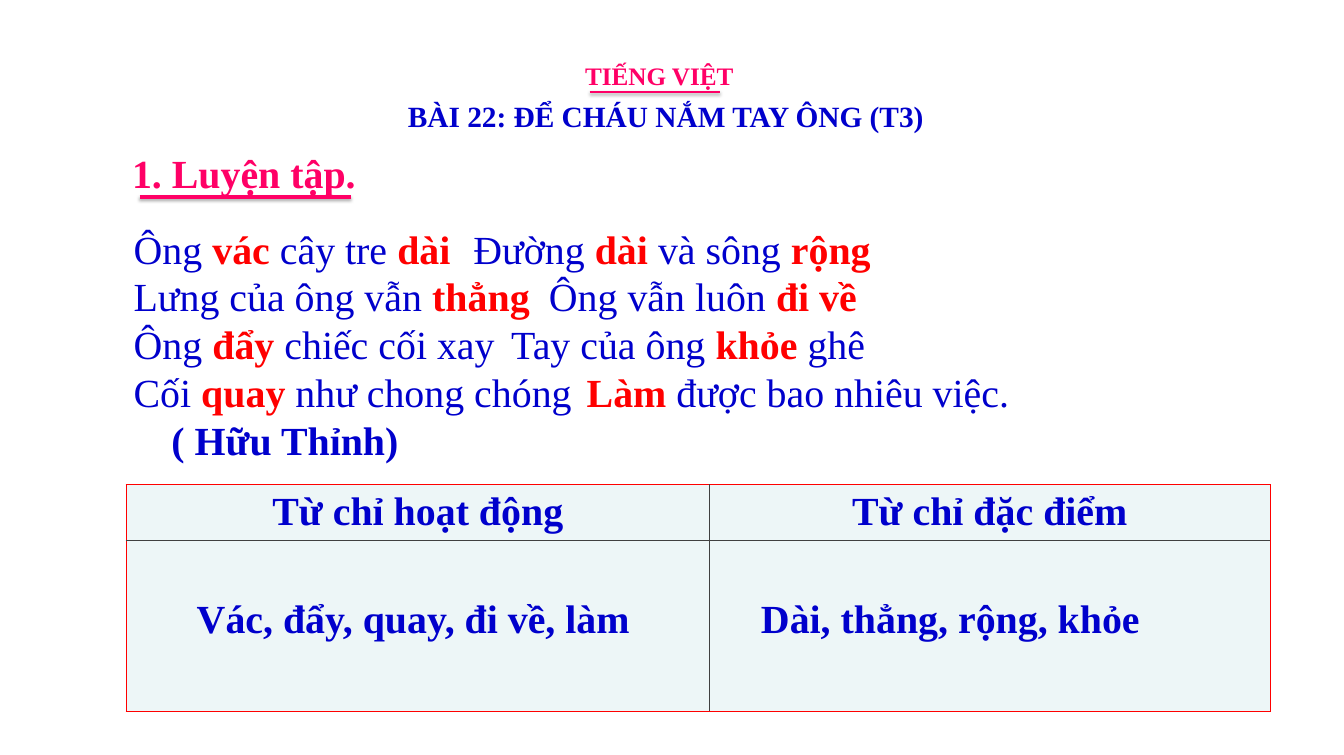
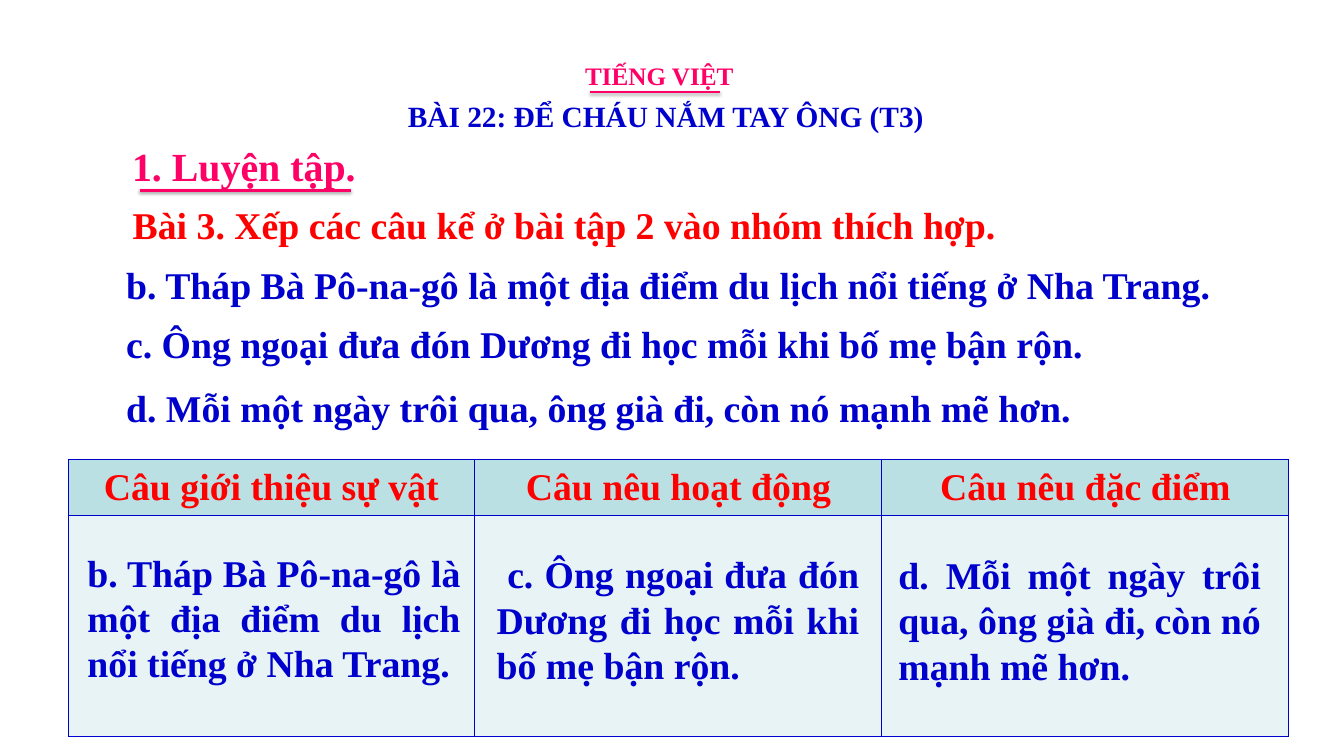
import pptx
import pptx.dml.color
import pptx.enum.shapes
import pptx.enum.text
import pptx.oxml
import pptx.oxml.ns
import pptx.util
from lxml import etree

Inches = pptx.util.Inches
Pt = pptx.util.Pt
RGB = pptx.dml.color.RGBColor.from_string
ALIGN = pptx.enum.text.PP_ALIGN
FIT = pptx.enum.text.MSO_AUTO_SIZE
MIDDLE = pptx.enum.text.MSO_ANCHOR.MIDDLE
TOP = pptx.enum.text.MSO_ANCHOR.TOP
LINE = pptx.enum.shapes.MSO_CONNECTOR.STRAIGHT
qn = pptx.oxml.ns.qn

THEME = {
    "font": "Times New Roman",
    "pink": "FF0066", "blue": "0000CC", "red": "FF0000", "dark": "404040",
    "pale": "EDF6F7", "head": "BBE0E3", "cell": "E7F3F4",
    "subject": 24, "title": 28, "text": 36, "large": 38,
}


def say(shape, text, size="text", color="blue", bold=True, align=ALIGN.LEFT,
        gap=0, first=0, tabs=()):
    """Add a paragraph; words between asterisks become bold red."""
    frame = shape.text_frame
    para = frame.paragraphs[0]
    if para.runs:
        para = frame.add_paragraph()
    props = para._p.get_or_add_pPr()
    props.set("marL", "0")
    props.set("indent", str(Inches(first)))
    etree.SubElement(props, qn("a:buNone"))
    if tabs:
        stops = etree.SubElement(props, qn("a:tabLst"))
        for stop in tabs:
            etree.SubElement(stops, qn("a:tab"), pos=str(Inches(stop)), algn="l")
    para.alignment = align
    para.space_before = Pt(gap)
    for i, part in enumerate(text.split("*")):
        if part:
            run = para.add_run()
            run.text = part
            run.font.name = THEME["font"]
            run.font.size = Pt(THEME[size])
            run.font.bold = bold or i % 2 == 1
            run.font.color.rgb = RGB(THEME["red" if i % 2 else color])


def rule(slide, left, top, width, weight):
    """Draw a pink underline with a soft shadow."""
    line = slide.shapes.add_connector(
        LINE, Inches(left), Inches(top), Inches(left + width), Inches(top))
    line.line.color.rgb = RGB(THEME["pink"])
    line.line.width = Pt(weight)
    effects = etree.SubElement(line._element.spPr, qn("a:effectLst"))
    shade = etree.SubElement(
        effects, qn("a:outerShdw"), blurRad=str(Pt(3.1)), dist=str(Pt(1.8)),
        dir="5400000", rotWithShape="0")
    tone = etree.SubElement(shade, qn("a:srgbClr"), val="000000")
    etree.SubElement(tone, qn("a:alpha"), val="35000")


# Lesson content
poem = [
    "Ông *vác* cây tre *dài*\tĐường *dài* và sông *rộng*",
    "Lưng của ông vẫn *thẳng*\tÔng vẫn luôn *đi về*",
    "Ông *đẩy* chiếc cối xay\tTay của ông *khỏe* ghê",
    "Cối *quay* như chong chóng\t*Làm* được bao nhiêu việc.",
]
lines = [
    "b. Tháp Bà Pô-na-gô là một địa điểm du lịch nổi tiếng ở Nha Trang.",
    "c. Ông ngoại đưa đón Dương đi học mỗi khi bố mẹ bận rộn.",
    "d. Mỗi một ngày trôi qua, ông già đi, còn nó mạnh mẽ hơn.",
]
pages = [
    {"top": 1.92, "body": (1.67, 2.92, 15.27, 3.3),
     "table": (1.67, 6.42), "cols": [7.73, 7.42], "rows": [0.73, 2.27],
     "heads": ["Từ chỉ hoạt động", "Từ chỉ đặc điểm"],
     "size": "large", "ink": "blue", "fills": ["pale", "pale"],
     "edge": "red", "inner": "dark"},
    {"top": 1.83, "body": (1.57, 3.42, 15.67, 2.29),
     "table": (0.9, 6.08), "cols": [5.39] * 3, "rows": [0.75, 2.92],
     "heads": ["Câu giới thiệu sự vật", "Câu nêu hoạt động", "Câu nêu đặc điểm"],
     "size": "text", "ink": "red", "fills": ["head", "cell"],
     "edge": "blue", "inner": "blue"},
]

deck = pptx.Presentation()
deck.slide_width, deck.slide_height = Inches(17.8), Inches(10)

slides, bodies = [], []
for page in pages:
    slide = deck.slides.add_slide(deck.slide_layouts[1])
    slides.append(slide)

    # Title and body placeholders
    title, body = slide.shapes.title, slide.placeholders[1]
    bodies.append(body)
    for holder, at in ((title, (4.9, 1.25, 7.83, 0.57)), (body, page["body"])):
        holder.left, holder.top, holder.width, holder.height = map(Inches, at)
        holder.text_frame.vertical_anchor = TOP
        holder.text_frame.auto_size = FIT.NONE
        holder.text_frame.word_wrap = True
    say(title, "BÀI 22: ĐỂ CHÁU NẮM TAY ÔNG (T3)", size="title", align=ALIGN.CENTER)

    # Subject and section heading with underlines
    top = page["top"]
    subject = slide.shapes.add_textbox(
        Inches(7.65), Inches(0.75), Inches(2.19), Inches(0.5))
    subject.text_frame.word_wrap = False
    subject.text_frame.auto_size = FIT.SHAPE_TO_FIT_TEXT
    say(subject, "TIẾNG VIỆT", size="subject", color="pink")
    rule(slide, 7.81, 1.22, 1.73, 2)
    part = slide.shapes.add_textbox(
        Inches(1.65), Inches(top), Inches(4.58), Inches(0.74))
    part.text_frame.word_wrap = True
    say(part, "1. Luyện tập.", size="large", color="pink")
    rule(slide, 1.85, top + 0.69, 2.8, 3)

    # Sorting table
    cols, rows = page["cols"], page["rows"]
    left, top = page["table"]
    grid = slide.shapes.add_table(
        len(rows), len(cols), Inches(left), Inches(top),
        Inches(sum(cols)), Inches(sum(rows))).table
    for c, width in enumerate(cols):
        grid.columns[c].width = Inches(width)
    for r, height in enumerate(rows):
        grid.rows[r].height = Inches(height)
        for c in range(len(cols)):
            cell = grid.cell(r, c)
            cell.vertical_anchor = MIDDLE
            props = cell._tc.get_or_add_tcPr()
            outer = {"lnL": c == 0, "lnR": c == len(cols) - 1,
                     "lnT": r == 0, "lnB": r == len(rows) - 1}
            for side, rim in outer.items():
                edge = etree.SubElement(props, qn("a:" + side), w=str(Pt(1)))
                fill = etree.SubElement(edge, qn("a:solidFill"))
                tone = THEME[page["edge" if rim else "inner"]]
                etree.SubElement(fill, qn("a:srgbClr"), val=tone)
            cell.fill.solid()
            cell.fill.fore_color.rgb = RGB(THEME[page["fills"][r]])
            if r == 0:
                say(cell, page["heads"][c], size=page["size"],
                    color=page["ink"], align=ALIGN.CENTER)

# Poem with its author
for verse in poem:
    say(bodies[0], verse, size="large", bold=False, tabs=[7.36])
say(bodies[0], "\t( Hữu Thỉnh)", size="large", tabs=[11.21])

# Sentences to sort
for line, gap in zip(lines, (0, 13, 18)):
    say(bodies[1], line, gap=gap)

# Task and answers laid over the tables
fit = {"align": ALIGN.JUSTIFY}
notes = [
    (0, (1.85, 7.81, 7.25, 0.74), "Vác, đẩy, quay, đi về, làm",
     {"size": "large", "align": ALIGN.CENTER}),
    (0, (9.98, 7.81, 6.01, 0.74), "Dài, thẳng, rộng, khỏe", {"size": "large"}),
    (1, (1.66, 2.62, 15.27, 0.71),
     "Bài 3. Xếp các câu kể ở bài tập 2 vào nhóm thích hợp.", {"color": "red"}),
    (1, (1.06, 7.23, 5.14, 1.92), lines[0], fit),
    (1, (6.48, 7.25, 5, 1.92), lines[1], {**fit, "first": 0.14}),
    (1, (11.8, 7.26, 5, 1.92), lines[2], fit),
]
for page, at, text, look in notes:
    box = slides[page].shapes.add_textbox(*map(Inches, at))
    box.text_frame.word_wrap = True
    say(box, text, **look)

deck.save("out.pptx")
